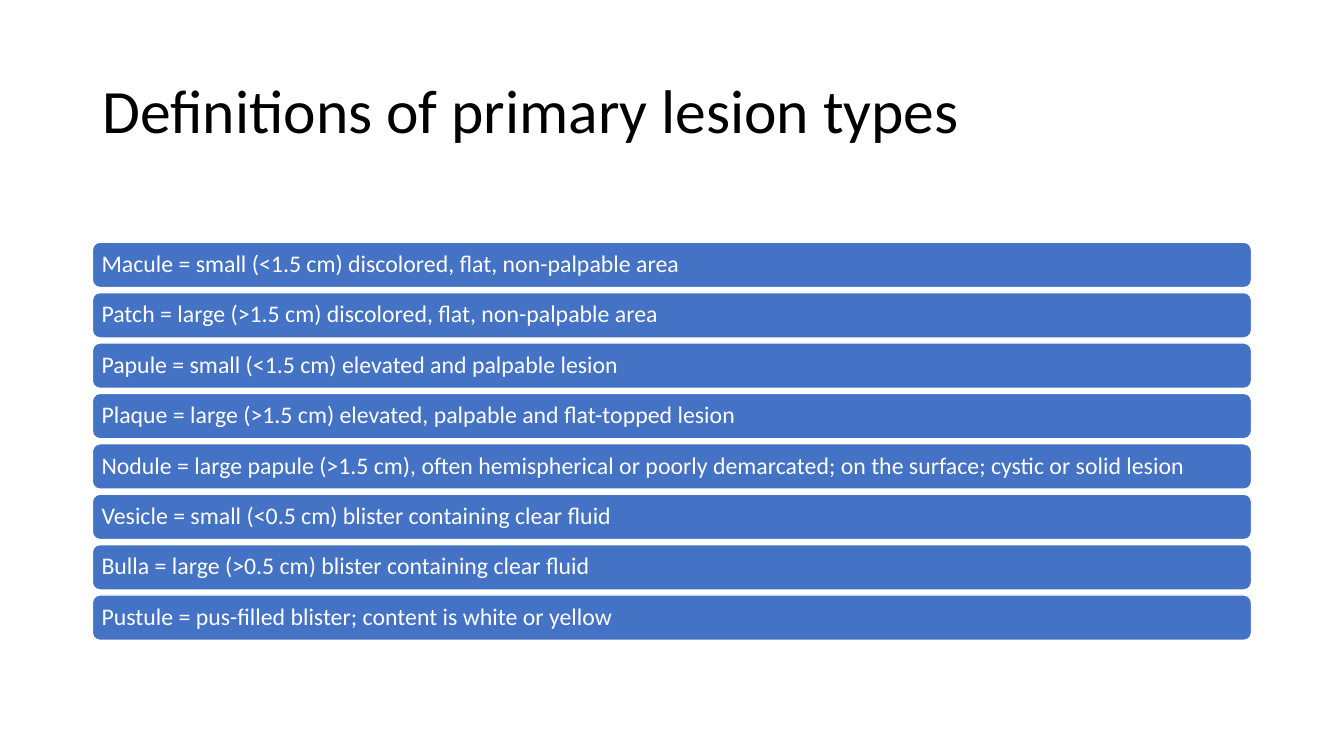
from dataclasses import dataclass

from pptx import Presentation
from pptx.dml.color import RGBColor as Rgb
from pptx.enum.shapes import MSO_SHAPE as Preset
from pptx.enum.text import MSO_ANCHOR as Anchor, PP_ALIGN as Align
from pptx.shapes.autoshape import Shape
from pptx.slide import Slide
from pptx.util import Pt

COLORS = {"bar": "4472C4", "outline": "FFFFFF", "bar_text": "FFFFFF", "title": "000000"}
LEFT, WIDTH = 66, 828
FIRST_TOP, PITCH, BAR_HEIGHT = 173, 36, 32.4


@dataclass(frozen=True)
class Definition:
    term: str
    meaning: str


DEFINITIONS = [
    Definition("Macule", "small (<1.5 cm) discolored, flat, non-palpable area"),
    Definition("Patch", "large (>1.5 cm) discolored, flat, non-palpable area"),
    Definition("Papule", "small (<1.5 cm) elevated and palpable lesion"),
    Definition("Plaque", "large (>1.5 cm) elevated, palpable and flat-topped lesion"),
    Definition(
        "Nodule",
        "large papule (>1.5 cm), often hemispherical or poorly demarcated; "
        "on the surface; cystic or solid lesion",
    ),
    Definition("Vesicle", "small (<0.5 cm) blister containing clear fluid"),
    Definition("Bulla", "large (>0.5 cm) blister containing clear fluid"),
    Definition("Pustule", "pus-filled blister; content is white or yellow"),
]


def apply_format(target: object, values: dict[str, object]) -> None:
    for name, value in values.items():
        setattr(target, name, value)


def write_text(holder: Shape, wording: str, size: float, color: str, inset: float) -> None:
    frame = holder.text_frame
    apply_format(frame, {
        "word_wrap": True,
        "vertical_anchor": Anchor.MIDDLE,
        "margin_left": Pt(inset),
        "margin_right": Pt(inset),
        "margin_top": Pt(inset / 2),
        "margin_bottom": Pt(inset / 2),
    })
    paragraph = frame.paragraphs[0]
    apply_format(paragraph, {"alignment": Align.LEFT, "line_spacing": 0.9})
    run = paragraph.add_run()
    run.text = wording
    apply_format(run.font, {"name": "Calibri", "size": Pt(size)})
    run.font.color.rgb = Rgb.from_string(COLORS[color])


def add_title(slide: Slide, wording: str) -> None:
    title = slide.shapes.add_textbox(Pt(LEFT), Pt(28.8), Pt(WIDTH), Pt(104.4))
    write_text(title, wording, 44, "title", 7.2)


def add_definition(slide: Slide, definition: Definition, row: int) -> None:
    bar = slide.shapes.add_shape(
        Preset.ROUNDED_RECTANGLE,
        Pt(LEFT), Pt(FIRST_TOP + row * PITCH), Pt(WIDTH), Pt(BAR_HEIGHT),
    )
    bar.shadow.inherit = False
    bar.fill.solid()
    bar.fill.fore_color.rgb = Rgb.from_string(COLORS["bar"])
    bar.line.color.rgb = Rgb.from_string(COLORS["outline"])
    bar.line.width = Pt(1)
    write_text(bar, f"{definition.term} = {definition.meaning}", 17, "bar_text", 5)


def main() -> None:
    deck = Presentation()
    apply_format(deck, {"slide_width": Pt(960), "slide_height": Pt(540)})
    slide = deck.slides.add_slide(deck.slide_layouts[6])
    add_title(slide, "Definitions of primary lesion types")
    for row, definition in enumerate(DEFINITIONS):
        add_definition(slide, definition, row)
    deck.save("out.pptx")


if __name__ == "__main__":
    main()
